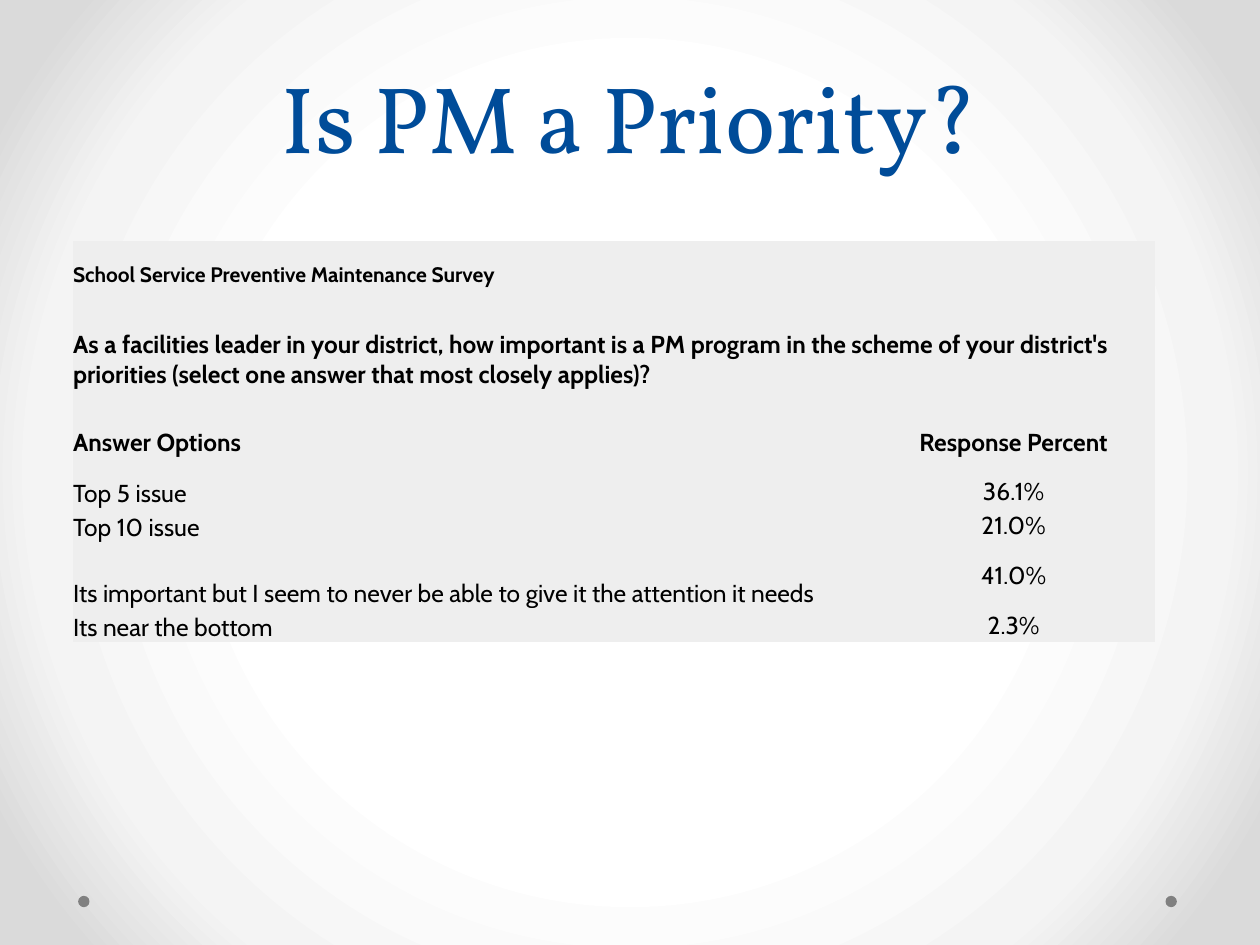
from pptx import Presentation
from pptx.dml.color import RGBColor
from pptx.enum.shapes import MSO_SHAPE
from pptx.enum.text import MSO_ANCHOR, PP_ALIGN
from pptx.oxml import parse_xml
from pptx.oxml.ns import nsdecls, qn
from pptx.util import Inches, Pt

OVAL = MSO_SHAPE.OVAL
MIDDLE, BOTTOM = MSO_ANCHOR.MIDDLE, MSO_ANCHOR.BOTTOM
LEFT, CENTER = PP_ALIGN.LEFT, PP_ALIGN.CENTER

COLORS = {"title": "004C99", "text": "000000", "panel": "EEEEEE", "dot": "808080"}
GRADIENT = [(50, "FFFFFF"), (76, "F4F4F4"), (92, "DADADA")]
NO_STYLE = "{2D5ABB26-0587-4C30-8999-92F81FD0307C}"

TITLE = {"name": "Vollkorn", "size": Pt(54), "bold": False}
SOURCE = {"name": "Cabin", "size": Pt(12), "bold": True}
HEADING = {**SOURCE, "size": Pt(14)}
BODY = {**HEADING, "bold": False}

COLUMNS = [6.54, 1.85, 0.2]
# Row height, text format, anchor of the first column, texts
ROWS = [
    (0.55, SOURCE, MIDDLE, ["School Service Preventive Maintenance Survey"]),
    (0.79, HEADING, MIDDLE, ["As a facilities leader in your district, how important is a PM "
                             "program in the scheme of your district's priorities (select one "
                             "answer that most closely applies)?"]),
    (0.52, HEADING, MIDDLE, ["Answer Options", "Response Percent", ""]),
    (0.27, BODY, BOTTOM, ["Top 5 issue", "36.1%", ""]),
    (0.27, BODY, BOTTOM, ["Top 10 issue", "21.0%", ""]),
    (0.52, BODY, BOTTOM, ["Its important but I seem to never be able to give it the "
                          "attention it needs", "41.0%", ""]),
    (0.27, BODY, BOTTOM, ["Its near the bottom", "2.3%", ""]),
]


def write(p, text, fmt, color, align):
    p.alignment = align
    r = p.add_run()
    r.text = text
    for key, value in fmt.items():
        setattr(r.font, key, value)
    r.font.color.rgb = RGBColor.from_string(COLORS[color])


def add_background(s):
    stops = "".join(f'<a:gs pos="{pos * 1000}"><a:srgbClr val="{color}"/></a:gs>'
                    for pos, color in GRADIENT)
    s.element.cSld.insert(0, parse_xml(
        f'<p:bg {nsdecls("p", "a")}><p:bgPr><a:gradFill rotWithShape="1">'
        f'<a:gsLst>{stops}</a:gsLst><a:path path="circle">'
        '<a:fillToRect l="50000" t="50000" r="50000" b="50000"/></a:path>'
        '</a:gradFill><a:effectLst/></p:bgPr></p:bg>'))


def add_dots(s, lefts, top, size):
    for left in lefts:
        dot = s.shapes.add_shape(OVAL, Inches(left), Inches(top), Inches(size), Inches(size))
        dot.shadow.inherit = False
        dot.fill.solid()
        dot.fill.fore_color.rgb = RGBColor.from_string(COLORS["dot"])
        dot.line.fill.background()


def add_title(s, left, top, width, height):
    box = s.shapes.add_textbox(Inches(left), Inches(top), Inches(width), Inches(height))
    tf = box.text_frame
    tf.word_wrap = True
    tf.vertical_anchor = BOTTOM
    p = tf.paragraphs[0]
    p.line_spacing = Pt(58)
    write(p, "Is PM a Priority?", TITLE, "title", CENTER)


def format_cell(cell, anchor):
    for side in ("left", "top", "right", "bottom"):
        setattr(cell, f"margin_{side}", 0)
    cell.vertical_anchor = anchor
    cell.fill.solid()
    cell.fill.fore_color.rgb = RGBColor.from_string(COLORS["panel"])


def add_survey(s, left, top, width, height):
    table = s.shapes.add_table(len(ROWS), len(COLUMNS), Inches(left), Inches(top),
                               Inches(width), Inches(height)).table
    table.first_row = table.horz_banding = False
    table._tbl.tblPr.find(qn("a:tableStyleId")).text = NO_STYLE
    for column, share in zip(table.columns, COLUMNS):
        column.width = Inches(share)

    for i, (row_height, fmt, anchor, texts) in enumerate(ROWS):
        table.rows[i].height = Inches(row_height)
        if len(texts) == 1:
            table.cell(i, 0).merge(table.cell(i, len(COLUMNS) - 1))
        for j in range(len(COLUMNS)):
            cell = table.cell(i, j)
            format_cell(cell, MIDDLE if j else anchor)
            p = cell.text_frame.paragraphs[0]
            if j < len(texts) and texts[j]:
                write(p, texts[j], fmt, "text", CENTER if j else LEFT)
            else:
                # Small end mark keeps an empty cell from stretching its row
                p._p.append(parse_xml(f'<a:endParaRPr {nsdecls("a")} sz="1200"/>'))


def main():
    prs = Presentation()
    prs.slide_width, prs.slide_height = Inches(10), Inches(7.5)
    s = prs.slides.add_slide(prs.slide_layouts[6])
    add_background(s)
    add_dots(s, [9.25, 0.62], 7.11, 0.09)
    add_title(s, 0.5, 0, 9, 1.42)
    add_survey(s, 0.58, 1.91, sum(COLUMNS), sum(row[0] for row in ROWS))
    prs.save("out.pptx")


if __name__ == "__main__":
    main()
